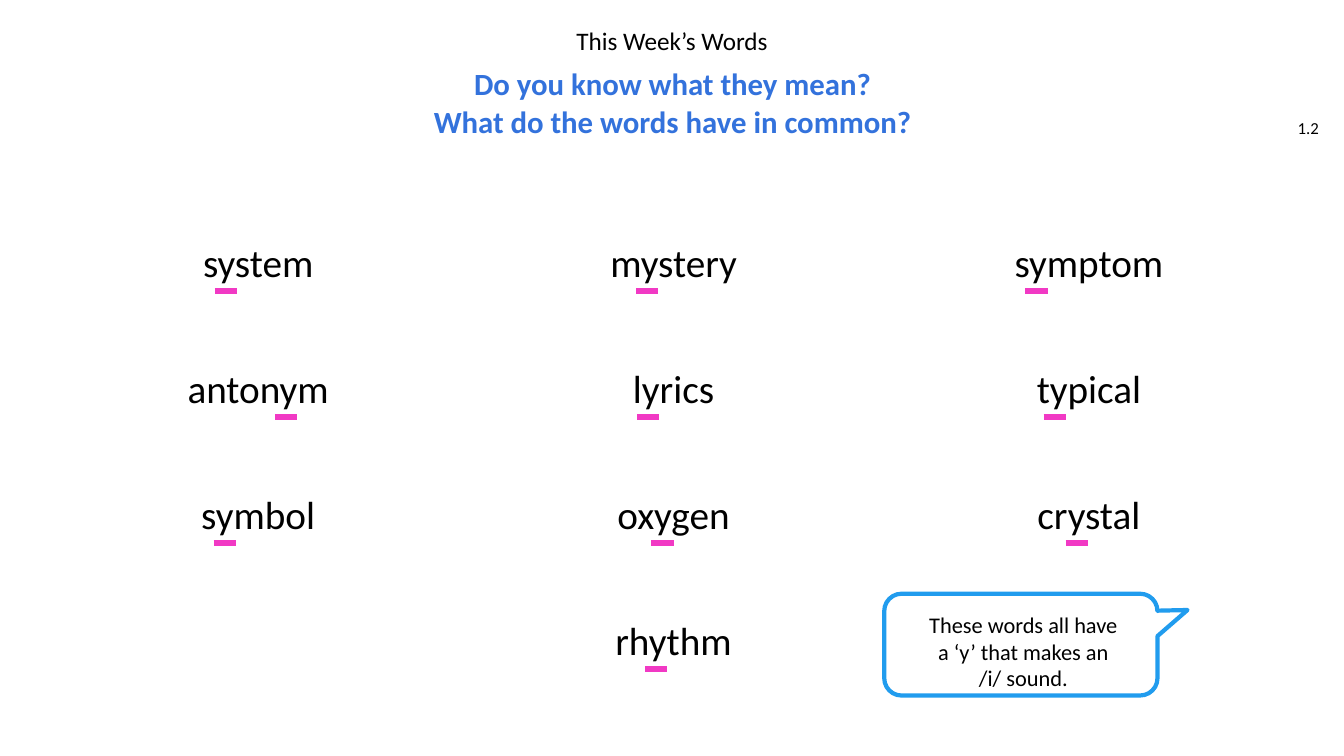
from pptx import Presentation
from pptx.dml.color import RGBColor
from pptx.enum.shapes import MSO_CONNECTOR, MSO_SHAPE
from pptx.enum.text import MSO_ANCHOR, MSO_AUTO_SIZE, PP_ALIGN
from pptx.oxml.ns import qn
from pptx.util import Inches, Pt

CENTER, RIGHT = PP_ALIGN.CENTER, PP_ALIGN.RIGHT
TOP, MIDDLE = MSO_ANCHOR.TOP, MSO_ANCHOR.MIDDLE
NO_AUTOFIT = MSO_AUTO_SIZE.NONE
STRAIGHT = MSO_CONNECTOR.STRAIGHT
CALLOUT = MSO_SHAPE.ROUNDED_RECTANGULAR_CALLOUT

FONT = "Calibri"
BLACK = RGBColor(0x00, 0x00, 0x00)
QUESTION_BLUE = RGBColor(0x33, 0x72, 0xDC)
CALLOUT_BLUE = RGBColor(0x21, 0x9C, 0xEE)
PINK = RGBColor(0xF1, 0x39, 0xC4)

MIDDLE_COLUMN, COLUMN_STEP = 6.68, 4.12
FIRST_ROW, ROW_STEP = 2.41, 1.25
WORD_WIDTH, WORD_HEIGHT = 3.59, 0.47
MARK_WIDTH, MARK_DROP = 0.22, 0.48
LINE_SPACING = Pt(27)

# Each word is paired with the distance from its centre to the centre of its "y".
WORD_ROWS = [
    [("system", -0.32), ("mystery", -0.26), ("symptom", -0.52)],
    [("antonym", 0.28), ("lyrics", -0.25), ("typical", -0.34)],
    [("symbol", -0.33), ("oxygen", -0.11), ("crystal", -0.12)],
    [None, ("rhythm", -0.17), None],
]


def place(shape, left, top, width, height):
    """Move and size a shape in inches."""
    shape.left, shape.top = Inches(left), Inches(top)
    shape.width, shape.height = Inches(width), Inches(height)


def format_frame(shape, anchor):
    """Set wrapping, fitting and anchoring of a shape's text."""
    frame = shape.text_frame
    frame.word_wrap = True
    frame.auto_size = NO_AUTOFIT
    frame.vertical_anchor = anchor
    return frame


def write_line(paragraph, text, size, color=BLACK, bold=False,
               align=CENTER, spacing=None):
    """Add one formatted run, with line breaks, to a paragraph."""
    paragraph.alignment = align
    paragraph.line_spacing = spacing
    paragraph.space_before = Pt(0)
    for index, part in enumerate(text.split("\n")):
        if index:
            paragraph.add_line_break()
        run = paragraph.add_run()
        run.text = part
        run.font.name = FONT
        run.font.size = Pt(size)
        run.font.bold = bold
        run.font.color.rgb = color


def add_label(slide, bounds, text, size, anchor=MIDDLE, **style):
    """Add a text box holding one paragraph."""
    box = slide.shapes.add_textbox(*map(Inches, bounds))
    write_line(format_frame(box, anchor).paragraphs[0], text, size, **style)


def add_headings(slide):
    """Fill the title and the two questions in the body placeholder."""
    title, body = slide.placeholders
    place(title, 3.82, 0.23, 5.69, 0.35)
    write_line(format_frame(title, TOP).paragraphs[0],
               "This Week’s Words", 18, spacing=0.9)
    place(body, 1.97, 0.6, 9.4, 0.82)
    frame = format_frame(body, MIDDLE)
    questions = ["Do you know what they mean?",
                 "What do the words have in common?"]
    for index, question in enumerate(questions):
        paragraph = frame.add_paragraph() if index else frame.paragraphs[0]
        properties = paragraph._p.get_or_add_pPr()
        properties.set("marL", "0")
        properties.set("indent", "0")
        properties.append(properties.makeelement(qn("a:buNone"), {}))
        write_line(paragraph, question, 22, QUESTION_BLUE, True,
                   spacing=LINE_SPACING)


def add_mark(slide, center, top):
    """Underline a letter with a short thick line."""
    left, right = center - MARK_WIDTH / 2, center + MARK_WIDTH / 2
    mark = slide.shapes.add_connector(
        STRAIGHT, Inches(left), Inches(top), Inches(right), Inches(top))
    mark.line.color.rgb = PINK
    mark.line.width = Pt(4.5)
    properties = mark._element.spPr
    properties.append(properties.makeelement(qn("a:effectLst"), {}))


def add_words(slide):
    """Lay out the words on the grid and underline each y."""
    for row, entries in enumerate(WORD_ROWS):
        top = FIRST_ROW + row * ROW_STEP
        for column, entry in enumerate(entries):
            if entry is None:
                continue
            word, offset = entry
            center = MIDDLE_COLUMN + (column - 1) * COLUMN_STEP
            bounds = center - WORD_WIDTH / 2, top, WORD_WIDTH, WORD_HEIGHT
            add_label(slide, bounds, word, 28, spacing=LINE_SPACING)
            add_mark(slide, center + offset, top + MARK_DROP)


def add_callout(slide):
    """Draw the speech bubble that answers the question."""
    bubble = slide.shapes.add_shape(
        CALLOUT, *map(Inches, (8.77, 5.89, 2.71, 1.01)))
    bubble.shadow.inherit = False
    bubble.fill.background()
    bubble.line.color.rgb = CALLOUT_BLUE
    bubble.line.width = Pt(3)
    for index, value in enumerate((0.61, -0.34, 0.17)):
        bubble.adjustments[index] = value
    add_label(slide, (8.96, 6.01, 2.38, 0.91),
              "These words all have\na ‘y’ that makes an\n/i/ sound.",
              16, TOP)


def main():
    """Build and save the slide."""
    presentation = Presentation()
    presentation.slide_width = Inches(13.33)
    presentation.slide_height = Inches(7.5)
    slide = presentation.slides.add_slide(presentation.slide_layouts[1])
    add_headings(slide)
    add_label(slide, (12.55, 1.07, 0.63, 0.4), "1.2", 12, align=RIGHT)
    add_words(slide)
    add_callout(slide)
    presentation.save("out.pptx")


if __name__ == "__main__":
    main()
